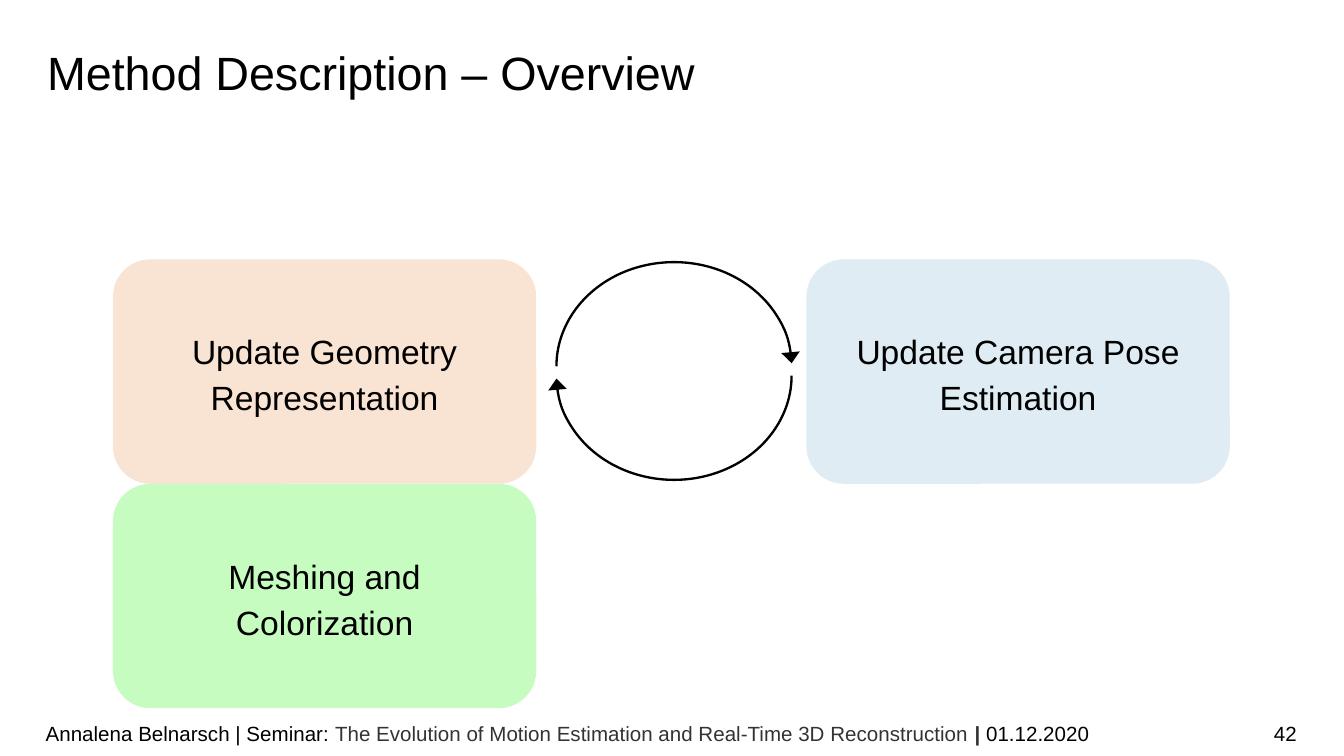
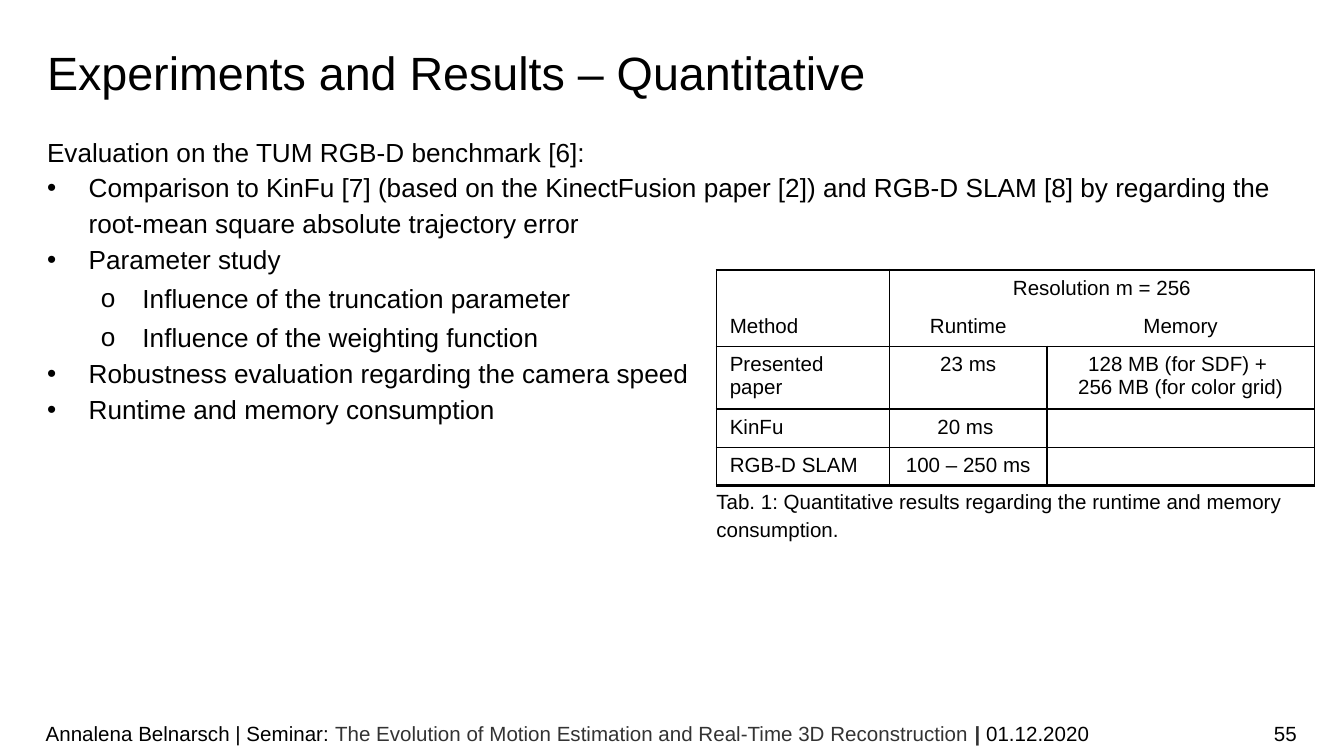
from dataclasses import dataclass

from lxml import etree
from pptx import Presentation
from pptx.dml.color import RGBColor
from pptx.enum.shapes import MSO_SHAPE
from pptx.enum.text import MSO_ANCHOR, MSO_AUTO_SIZE, PP_ALIGN
from pptx.oxml.ns import qn
from pptx.util import Emu, Pt

LEFT, MID, RIGHT = PP_ALIGN.LEFT, PP_ALIGN.CENTER, PP_ALIGN.RIGHT
TOP, CENTER = MSO_ANCHOR.TOP, MSO_ANCHOR.MIDDLE
GROW, FIXED = MSO_AUTO_SIZE.SHAPE_TO_FIT_TEXT, MSO_AUTO_SIZE.NONE
ROUND, ARC = MSO_SHAPE.ROUNDED_RECTANGLE, MSO_SHAPE.ARC


@dataclass(frozen=True)
class Theme:
    font: str = "Arial"
    ink: str = "000000"
    gray: str = "333333"
    peach: str = "F9E3D3"
    sky: str = "E0ECF4"
    mint: str = "C7FCC0"
    title: int = 25
    step: int = 18
    body: int = 14
    small: int = 11
    lead: float = 1.14
    loose: float = 1.25


T = Theme()
PX = 9144  # 100 px to the inch
WIDE = 1000

FOOTER = [
    ("Annalena Belnarsch | Seminar: ", T.ink, False),
    ("The Evolution of Motion Estimation and Real-Time 3D Reconstruction",
     T.gray, False),
    (" | ", T.gray, True),
    ("01.12.2020", T.ink, False),
]

# text, column, row, fill
STEPS = [
    ("Update Geometry Representation", 0, 0, T.peach),
    ("Update Camera Pose Estimation", 1, 0, T.sky),
    ("Meshing and Colorization", 0, 1, T.mint),
]
STEP_AT, STEP_SIZE, STEP_GAP = (84, 193), (315, 167), 201

# top, turned over
LOOP = [(185, False), (192, True)]

# text, level: 0 is plain, 1 and 2 are bullets
POINTS = [
    ("Evaluation on the TUM RGB-D benchmark [6]:", 0),
    ("Comparison to KinFu [7] (based on the KinectFusion paper [2]) and "
     "RGB-D SLAM [8] by regarding the root-mean square absolute trajectory "
     "error", 1),
    ("Parameter study", 1),
    ("Influence of the truncation parameter", 2),
    ("Influence of the weighting function", 2),
    ("Robustness evaluation regarding the camera speed", 1),
    ("Runtime and memory consumption", 1),
]
BULLETS = {1: ("•", 31), 2: ("o", 71)}
HANG = 31

RESULTS = [
    ("", "Resolution m = 256", ""),
    ("Method", "Runtime", "Memory"),
    ("Presented paper", "23 ms",
     "128 MB (for SDF) + \n256 MB (for color grid)"),
    ("KinFu", "20 ms ", ""),
    ("RGB-D SLAM", "100 – 250 ms", ""),
]
COLS, ROWS = (129, 117, 199), (28, 28, 46, 28, 28)
CAPTION = ("Tab. 1: Quantitative results regarding the runtime and memory "
           "consumption.")


def px(*sizes):
    return [Emu(size * PX) for size in sizes]


def rgb(code):
    return RGBColor.from_string(code)


def add_run(para, text, size, color=T.ink, bold=False):
    run = para.add_run()
    run.text = text
    font = run.font
    font.name, font.size, font.bold = T.font, Pt(size), bold
    font.color.rgb = rgb(color)


def add_box(slide, at, pad=0, anchor=TOP, fit=FIXED):
    """Add a wrapping text box and return its text frame."""
    frame = slide.shapes.add_textbox(*px(*at)).text_frame
    frame.word_wrap, frame.auto_size = True, fit
    frame.vertical_anchor = anchor
    frame.margin_left = frame.margin_right = 0
    frame.margin_top = frame.margin_bottom = px(pad)[0]
    return frame


def add_slide(deck, title, number):
    """Add a slide with the shared title, footer and page number."""
    slide = deck.slides.add_slide(deck.slide_layouts[6])
    para = add_box(slide, (35, 30, 931, 42), fit=GROW).paragraphs[0]
    para.line_spacing = Pt(32)
    add_run(para, title, T.title)

    para = add_box(slide, (741, 531, 224, 30), 5, CENTER).paragraphs[0]
    para.alignment = RIGHT
    add_run(para, number, T.small)

    para = add_box(slide, (34, 531, 917, 30), 5, CENTER).paragraphs[0]
    for text, color, bold in FOOTER:
        add_run(para, text, T.small, color, bold)
    return slide


def add_step(slide, text, col, row, fill):
    wide, high = STEP_SIZE
    left = STEP_AT[0] + col * (wide + STEP_GAP)
    top = STEP_AT[1] + row * high
    box = slide.shapes.add_shape(ROUND, *px(left, top, wide, high))
    box.shadow.inherit = False
    box.fill.solid()
    box.fill.fore_color.rgb = rgb(fill)
    box.line.fill.background()
    frame = box.text_frame
    frame.word_wrap, frame.vertical_anchor = True, CENTER
    para = frame.paragraphs[0]
    para.alignment, para.line_spacing = MID, T.lead
    add_run(para, text, T.step)


def add_arc(slide, top, turned):
    """Add half of the loop, with an arrowhead at its end."""
    arc = slide.shapes.add_shape(ARC, *px(424, top, 155, 175))
    arc.shadow.inherit = False
    arc.adjustments[0], arc.adjustments[1] = 162, 53.13
    arc.rotation = 270
    arc.fill.background()
    arc.line.color.rgb = rgb(T.ink)
    arc.line.width = Pt(1.25)
    etree.SubElement(arc.line._get_or_add_ln(), qn("a:tailEnd"),
                     type="triangle", w="lg")
    if turned:
        frame = arc._element.spPr.find(qn("a:xfrm"))
        frame.set("flipH", "1")
        frame.set("flipV", "1")


def add_points(slide):
    frame = add_box(slide, (35, 98, 931, 415))
    for i, (text, level) in enumerate(POINTS):
        para = frame.add_paragraph() if i else frame.paragraphs[0]
        if level:
            mark, left = BULLETS[level]
            para.level = level - 1
            props = para._p.get_or_add_pPr()
            props.set("marL", str(left * PX))
            props.set("indent", str(-HANG * PX))
            etree.SubElement(props, qn("a:buFont"), typeface=T.font)
            etree.SubElement(props, qn("a:buChar"), char=mark)
        para.line_spacing = T.loose if level == 2 else T.lead
        add_run(para, text, T.body)


def edges(row, col):
    """Give the border widths of a cell in points; 0 is no border."""
    return {
        "a:lnL": 0 if (row, col) in [(1, 2), (0, 2)] else 1,
        "a:lnR": 0 if (row, col) == (1, 1) else 1,
        "a:lnT": {0: 1.5, 1: 0}.get(row, 1),
        "a:lnB": {0: 0, len(ROWS) - 1: 1.5}.get(row, 1),
    }


def set_edges(cell, row, col):
    props = cell._tc.get_or_add_tcPr()
    for i, (tag, width) in enumerate(edges(row, col).items()):
        line = etree.Element(qn(tag), w=str(Pt(width)))
        if width:
            fill = etree.SubElement(line, qn("a:solidFill"))
            etree.SubElement(fill, qn("a:srgbClr"), val=T.ink)
        else:
            etree.SubElement(line, qn("a:noFill"))
        props.insert(i, line)


def add_results(slide):
    at = px(533, 201, sum(COLS), sum(ROWS))
    table = slide.shapes.add_table(len(ROWS), len(COLS), *at).table
    table.first_row = table.horz_banding = False
    for col, wide in zip(table.columns, px(*COLS)):
        col.width = wide
    for row, high in zip(table.rows, px(*ROWS)):
        row.height = high
    table.cell(0, 1).merge(table.cell(0, 2))

    for r, texts in enumerate(RESULTS):
        for c, text in enumerate(texts):
            cell = table.cell(r, c)
            cell.fill.background()
            set_edges(cell, r, c)
            frame = cell.text_frame
            for i, line in enumerate(text.split("\n")):
                para = frame.add_paragraph() if i else frame.paragraphs[0]
                para.alignment = MID if c else LEFT
                if line:
                    add_run(para, line, T.small)
                else:
                    end = etree.SubElement(para._p, qn("a:endParaRPr"),
                                           sz=str(T.small * 100))
                    etree.SubElement(end, qn("a:latin"), typeface=T.font)


def main():
    deck = Presentation()
    deck.slide_width = px(WIDE)[0]
    deck.slide_height = Emu(deck.slide_width * 9 // 16)

    slide = add_slide(deck, "Method Description – Overview", "42")
    for step in STEPS:
        add_step(slide, *step)
    for half in LOOP:
        add_arc(slide, *half)

    slide = add_slide(deck, "Experiments and Results – Quantitative", "55")
    add_points(slide)
    add_results(slide)
    para = add_box(slide, (533, 361, 446, 40), fit=GROW).paragraphs[0]
    para.line_spacing = T.lead
    add_run(para, CAPTION, T.small)

    deck.save("out.pptx")


if __name__ == "__main__":
    main()
